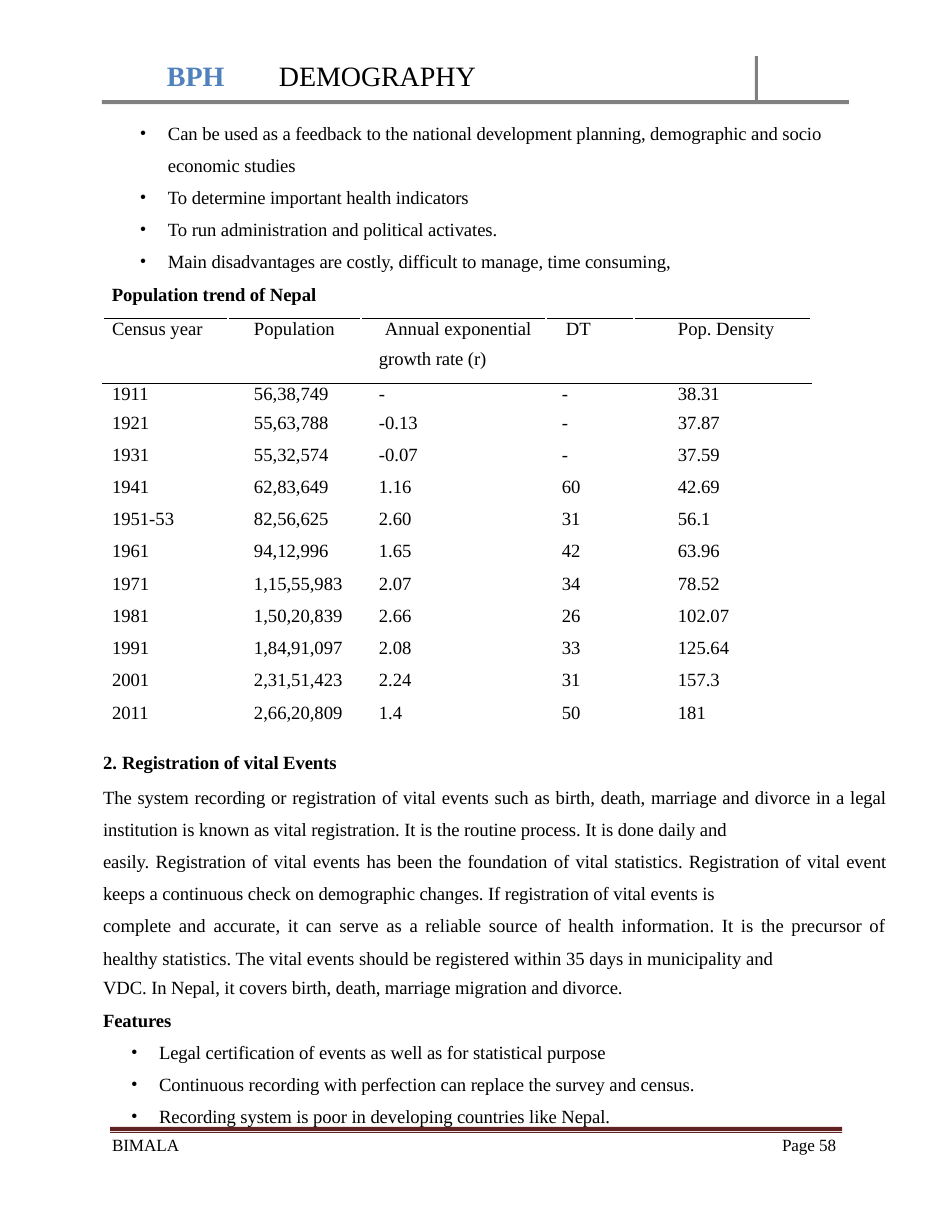
from lxml import etree
from pptx import Presentation
from pptx import util as u
from pptx.dml.color import RGBColor
from pptx.enum import text
from pptx.oxml import ns

SCALE = 914400 / 112  # EMU in one px
FONT = "Times New Roman"
BLACK, GREY, BLUE, MAROON = "000000", "808080", "4F81BC", "612322"

COLUMN_WIDTHS = [125, 133, 185, 88, 177]
ROW_HEIGHTS = [65, 27, *[32] * 4, 33, *[32] * 3, 33, 38]
CELL_INDENTS = [9, 26, 18, 16, 44]
HEADER_INDENTS = [9, 26, 24, 20, 44]
HEADER = ["Census year", "Population", "Annual exponential", "DT", "Pop. Density"]
CENSUS = [
    ["1911", "56,38,749", "-", "-", "38.31"],
    ["1921", "55,63,788", "-0.13", "-", "37.87"],
    ["1931", "55,32,574", "-0.07", "-", "37.59"],
    ["1941", "62,83,649", "1.16", "60", "42.69"],
    ["1951-53", "82,56,625", "2.60", "31", "56.1"],
    ["1961", "94,12,996", "1.65", "42", "63.96"],
    ["1971", "1,15,55,983", "2.07", "34", "78.52"],
    ["1981", "1,50,20,839", "2.66", "26", "102.07"],
    ["1991", "1,84,91,097", "2.08", "33", "125.64"],
    ["2001", "2,31,51,423", "2.24", "31", "157.3"],
    ["2011", "2,66,20,809", "1.4", "50", "181"],
]
USES = [
    "To determine important health indicators",
    "To run administration and political activates.",
    "Main disadvantages are costly, difficult to manage, time consuming,",
]
REGISTRATION = [
    ("The system recording or registration of vital events such as birth, death, marriage "
     "and divorce in a legal institution is known as vital registration. It is the routine "
     "process. It is done daily and", 1.6, -5),
    ("easily. Registration of vital events has been the foundation of vital statistics. "
     "Registration of vital event keeps a continuous check on demographic changes. If "
     "registration of vital events is", 0.2, -5),
    ("complete and accurate, it can serve as a reliable source of health information. It is "
     "the precursor of healthy statistics. The vital events should be registered within 35 "
     "days in municipality and", 0.2, 0),
]
FEATURES = [
    "Legal certification of events as well as for statistical purpose",
    "Continuous recording with perfection can replace the survey and census.",
    "Recording system is poor in developing countries like Nepal.",
]


def px(length):
    return u.Emu(round(length * SCALE))


def rgb(color):
    return RGBColor.from_string(color)


def add_element(parent, tag, **attributes):
    element = etree.SubElement(parent, ns.qn(tag))
    for name, value in attributes.items():
        element.set(name, str(value))
    return element


def add_run(paragraph, words, size=12, bold=False, color=BLACK, spacing=-5):
    """Add formatted text; spacing is in hundredths of a point."""
    run = paragraph.add_run()
    run.text = words
    run.font.name, run.font.size, run.font.bold = FONT, u.Pt(size), bold
    run.font.color.rgb = rgb(color)
    run.font._element.set("spc", str(spacing))


def add_paragraph(frame, words="", indent=1, hanging=0, before=0, line=None,
                  align=text.PP_ALIGN.LEFT, bullet=None, number=None, tabs=(), **font):
    """Fill the frame's empty first paragraph, or append one."""
    paragraph = frame.paragraphs[0]
    if paragraph.runs:
        paragraph = frame.add_paragraph()
    paragraph.alignment = align
    paragraph.space_before = u.Pt(before)
    if line:
        paragraph.line_spacing = line
    properties = paragraph._p.get_or_add_pPr()
    properties.set("marL", str(px(indent)))
    properties.set("indent", str(px(-hanging)))
    if bullet:
        add_element(properties, "a:buFont", typeface=FONT)
        add_element(properties, "a:buChar", char=bullet)
    if number:
        add_element(properties, "a:buFont", typeface=FONT)
        add_element(properties, "a:buAutoNum", type="arabicPeriod", startAt=number)
    if tabs:
        tab_list = add_element(properties, "a:tabLst")
        for position in tabs:
            add_element(tab_list, "a:tab", pos=px(position), algn="l")
    if words:
        add_run(paragraph, words, **font)
    return paragraph


def add_bullet(frame, words, before=6.2, **options):
    add_paragraph(frame, words, indent=57, hanging=28, before=before, bullet="•", **options)


def add_text_box(slide, left, top, width, height, inset_top=0):
    frame = slide.shapes.add_textbox(px(left), px(top), px(width), px(height)).text_frame
    frame.word_wrap = True
    frame.margin_left = frame.margin_right = frame.margin_bottom = 0
    frame.margin_top = px(inset_top)
    return frame


def add_outline(slide, contours, color):
    """Draw closed contours as one filled shape."""
    builder = slide.shapes.build_freeform(*contours[0][0], scale=SCALE)
    for number, (start, *points) in enumerate(contours):
        if number:
            builder.move_to(*start)
        builder.add_line_segments(points, close=True)
    shape = builder.convert_to_shape()
    shape.shadow.inherit = False
    shape.fill.solid()
    shape.fill.fore_color.rgb = rgb(color)
    shape.line.fill.background()


def bar(left, top, right, bottom):
    return [(left, top), (right, top), (right, bottom), (left, bottom)]


def add_rules(cell):
    """Draw thin lines above and below a cell."""
    properties = cell._tc.get_or_add_tcPr()
    for position, tag in enumerate(("a:lnT", "a:lnB")):
        border = etree.Element(ns.qn(tag), w=str(u.Pt(0.5)))
        fill = add_element(border, "a:solidFill")
        add_element(fill, "a:srgbClr", val=BLACK)
        properties.insert(position, border)


def add_census_table(slide):
    rows = [HEADER, *CENSUS]
    table = slide.shapes.add_table(len(rows), len(HEADER), px(103), px(318),
                                   px(sum(COLUMN_WIDTHS)), px(sum(ROW_HEIGHTS))).table
    table.first_row = table.horz_banding = False
    for column, width in zip(table.columns, COLUMN_WIDTHS):
        column.width = px(width)
    for row_number, values in enumerate(rows):
        table.rows[row_number].height = px(ROW_HEIGHTS[row_number])
        ruled = row_number < 2
        indents = CELL_INDENTS if row_number else HEADER_INDENTS
        for column_number, value in enumerate(values):
            cell = table.cell(row_number, column_number)
            cell.fill.background()
            cell.margin_left = cell.margin_right = cell.margin_bottom = 0
            cell.margin_top = px(0 if ruled else 3)
            add_paragraph(cell.text_frame, value, indent=indents[column_number],
                          before=0 if ruled else 2.4, line=u.Pt(13.7) if ruled else None,
                          spacing=0)
            if ruled:
                add_rules(cell)
    add_paragraph(table.cell(0, 2).text_frame, "growth rate (r)",
                  indent=CELL_INDENTS[2], before=6.2)


def add_upper_text(slide):
    frame = add_text_box(slide, 111, 58, 731, 250, inset_top=1)
    title = add_paragraph(frame, indent=0, before=1, tabs=(273, 458))
    add_run(title, "\tBPH", size=18, bold=True, color=BLUE)
    add_run(title, "\tDEMOGRAPHY", size=18)
    add_bullet(frame, "Can be used as a feedback to the national development planning, "
               "demographic and socio economic studies", before=12.5, line=1.43)
    for use in USES:
        add_bullet(frame, use)
    add_paragraph(frame, "Population trend of Nepal", before=6.6, bold=True)


def add_lower_text(slide):
    frame = add_text_box(slide, 102, 740, 785, 395, inset_top=11)
    add_paragraph(frame, "Registration of vital Events", indent=20, hanging=19,
                  before=7.1, number=2, bold=True)
    for words, before, spacing in REGISTRATION:
        add_paragraph(frame, words, before=before, line=u.Pt(20.6),
                      align=text.PP_ALIGN.JUSTIFY, spacing=spacing)
    add_paragraph(frame, "VDC. In Nepal, it covers birth, death, marriage migration and divorce.",
                  before=4.7, align=text.PP_ALIGN.JUSTIFY)
    add_paragraph(frame, "Features", before=6.5, bold=True)
    for feature in FEATURES:
        add_bullet(frame, feature)


def main():
    presentation = Presentation()
    presentation.slide_width, presentation.slide_height = px(952), px(1232)
    slide = presentation.slides.add_slide(presentation.slide_layouts[6])
    add_outline(slide, [bar(102, 100, 755, 104),
                        [(849, 100), (758, 100), (758, 56), (755, 56), (755, 104), (849, 104)]],
                GREY)
    add_upper_text(slide)
    add_outline(slide, [bar(110, 1132, 842, 1133), bar(110, 1127, 842, 1131)], MAROON)
    add_census_table(slide)
    for words, left, width in (("BIMALA", 111, 311), ("Page 58", 781, 64)):
        footer = add_text_box(slide, left, 1137, width, 20)
        add_paragraph(footer, words, line=u.Pt(11.8), size=11)
    add_lower_text(slide)
    presentation.save("out.pptx")


if __name__ == "__main__":
    main()
